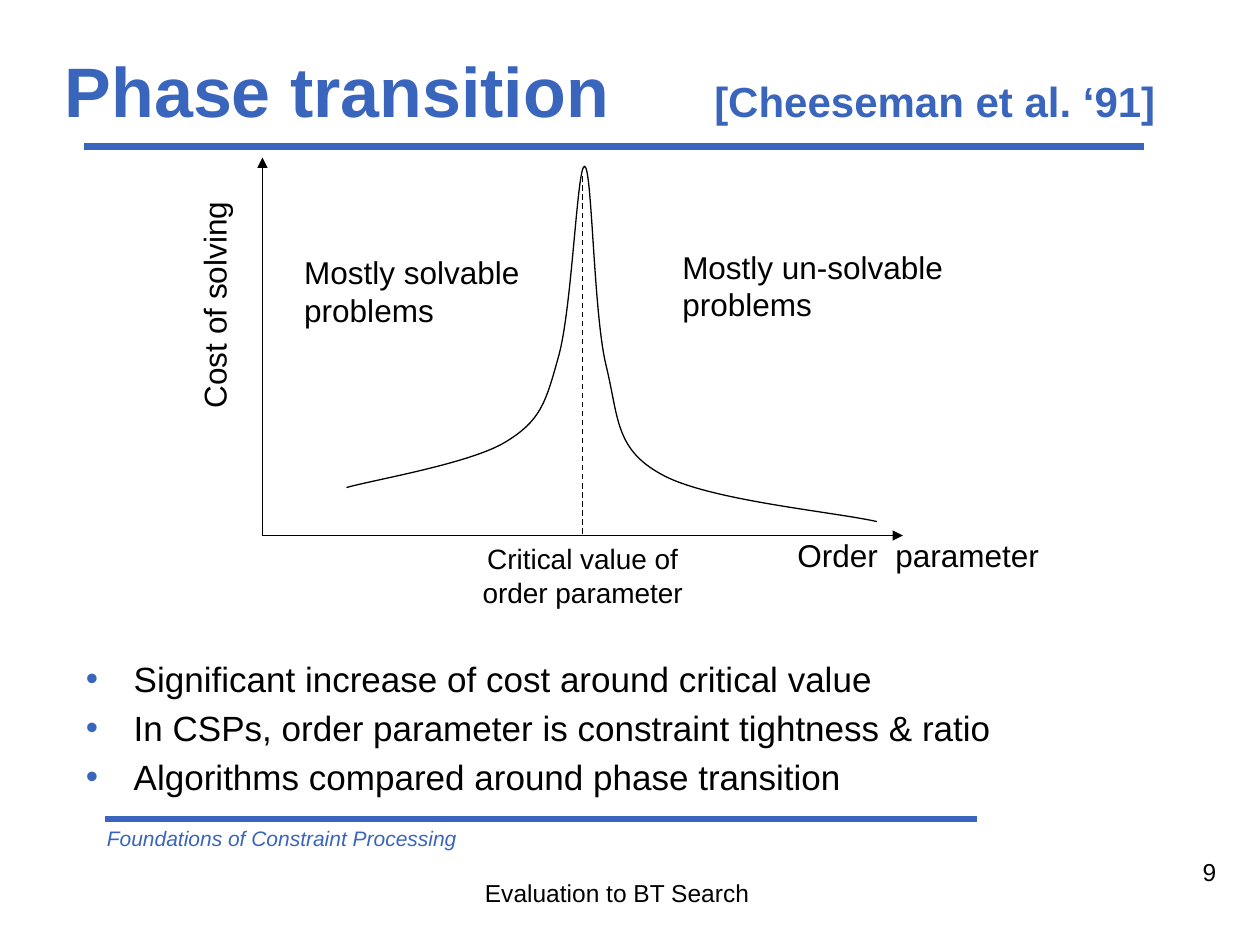
from pptx import Presentation
from pptx.dml.color import RGBColor
from pptx.enum.dml import MSO_LINE
from pptx.enum.shapes import MSO_CONNECTOR
from pptx.enum.text import MSO_ANCHOR, PP_ALIGN as Align
from pptx.oxml.ns import qn
from pptx.util import Inches, Pt
from lxml.etree import SubElement as Sub

HEX = {"blue": "3A65BC", "black": "000000"}
COLS, ROWS = 120, 90  # grid of twelfths of an inch
PLOT = (25, 15, 61, 36)
# Bezier chain in grid units from the plot's corner: start, then triples
CURVE = [
    (8, 31.44),
    (10.52, 30.72), (19.76, 29.16), (23.12, 27.12),
    (26.48, 25.08), (26.96, 23.4), (28.16, 19.08),
    (29.48, 14.64), (29.96, 0.72), (30.68, 0.84),
    (31.4, 0.96), (31.52, 14.88), (32.72, 19.8),
    (33.92, 24.72), (33.56, 27.72), (37.88, 30.12),
    (42.2, 32.64), (54.2, 33.72), (58.52, 34.68),
]
LABELS = [  # text, box from the plot's corner, size, align, turn, wrap
    ("Cost of solving", (-15.64, 11.64, 22.08, 4.8), 18, Align.LEFT, 270, False),
    ("Mostly solvable problems", (2.8, 8.5, 23.16, 8.4), 18, Align.LEFT, 0, True),
    ("Mostly un-solvable problems", (38.8, 8, 28.2, 8.4), 18, Align.LEFT, 0, True),
    ("Order  parameter", (49.76, 35.45, 25.44, 4.8), 18, Align.LEFT, 0, False),
    ("Critical value of order parameter", (19, 36, 23, 7.68), 16,
     Align.CENTER, 0, True),
]
POINTS = [
    "Significant increase of cost around critical value",
    "In CSPs, order parameter is constraint tightness & ratio",
    "Algorithms compared around phase transition",
]


def grid(*vals):
    return [Inches(v / 12) for v in vals]


def paint(font, size, color="black", bold=False, italic=False):
    font.name, font.size = "Arial", Pt(size)
    font.bold, font.italic = bold, italic
    font.color.rgb = RGBColor.from_string(HEX[color])


def add_text(slide, box, text, size, color="black", align=Align.LEFT,
             wrap=True, italic=False):
    shape = slide.shapes.add_textbox(*grid(*box))
    frame = shape.text_frame
    frame.word_wrap = wrap
    frame.text = text
    for para in frame.paragraphs:
        para.alignment = align
        for run in para.runs:
            paint(run.font, size, color, italic=italic)
    return shape


def add_line(slide, start, end, color="black", width=0.75, arrow=False, dash=False):
    line = slide.shapes.add_connector(MSO_CONNECTOR.STRAIGHT, *grid(*start, *end))
    line.line.color.rgb = RGBColor.from_string(HEX[color])
    line.line.width = Pt(width)
    if dash:
        line.line.dash_style = MSO_LINE.DASH
    if arrow:
        Sub(line.line._get_or_add_ln(), qn("a:tailEnd"), type="triangle")
    Sub(line._element.spPr, qn("a:effectLst"))


def add_curve(slide, left, top):
    dots = [grid(left + x, top + y) for x, y in CURVE]
    pen = slide.shapes.build_freeform(*dots[0])
    pen.add_line_segments(dots[1:], close=False)
    curve = pen.convert_to_shape()
    # Each three straight steps become one Bezier arc
    steps = list(curve._element.iter(qn("a:lnTo")))
    track = steps[0].getparent()
    for i in range(0, len(steps), 3):
        arc = Sub(track, qn("a:cubicBezTo"))
        for step in steps[i:i + 3]:
            arc.append(step[0])
            track.remove(step)
    curve.shadow.inherit = False
    curve.fill.background()
    curve.line.color.rgb = RGBColor.from_string(HEX["black"])
    curve.line.width = Pt(0.75)


def add_header(slide, box):
    left, top, width, height = box
    shape = add_text(slide, box, "Phase transition\t ", 40, "blue")
    frame = shape.text_frame
    frame.vertical_anchor = MSO_ANCHOR.MIDDLE
    para = frame.paragraphs[0]
    tabs = Sub(para._p.get_or_add_pPr(), qn("a:tabLst"))
    Sub(tabs, qn("a:tab"), pos=str(Inches(5)), algn="l")
    cite = para.add_run()
    cite.text = "[Cheeseman et al. ‘91]"
    for run, size in zip(para.runs, (40, 24)):
        paint(run.font, size, "blue", bold=True)
    rule = top + height + 1
    add_line(slide, (left + 3, rule), (left + width - 4, rule), "blue", 4)


def add_plot(slide, box):
    left, top, width, height = box
    base, peak = top + height, left + 30.5
    add_line(slide, (left, base), (left, top), arrow=True)
    add_line(slide, (left, base), (left + width, base), arrow=True)
    add_curve(slide, left, top)
    add_line(slide, (peak, top + 1.8), (peak, base - 0.12), dash=True)
    for text, (x, y, wide, high), size, align, turn, wrap in LABELS:
        label = add_text(slide, (left + x, top + y, wide, high), text, size,
                         align=align, wrap=wrap)
        label.rotation = turn


def add_points(slide, box):
    shape = add_text(slide, box, "\n".join(POINTS), 20)
    for i, para in enumerate(shape.text_frame.paragraphs):
        if i:
            para.space_before = Pt(4)
        props = para._p.get_or_add_pPr()
        props.set("marL", str(Inches(0.38)))
        props.set("indent", str(-Inches(0.38)))
        tint = Sub(props, qn("a:buClr"))
        Sub(tint, qn("a:srgbClr"), val=HEX["blue"])
        Sub(props, qn("a:buFont"), typeface="Arial")
        Sub(props, qn("a:buChar"), char="•")


def add_footer(slide, box):
    left, top, width, height = box
    add_line(slide, (left + 1, top), (left + 84, top), "blue", 4)
    add_text(slide, (left, top, 63, 3.6), "Foundations of Constraint Processing",
             12, "blue", italic=True)
    add_text(slide, (left + 36, top + 5, 27.72, 4), "Evaluation to BT Search",
             14, wrap=False)
    add_text(slide, (left + width - 28, top + 3, 28, 6.24), "9", 14,
             align=Align.RIGHT)


def main():
    deck = Presentation()
    deck.slide_width, deck.slide_height = grid(COLS, ROWS)
    slide = deck.slides.add_slide(deck.slide_layouts[6])
    add_header(slide, (5, 4, 108, 9))
    add_plot(slide, PLOT)
    add_points(slide, (7, 62, 107, 14))
    add_footer(slide, (9, 78, 108, 12))
    deck.save("out.pptx")


if __name__ == "__main__":
    main()
